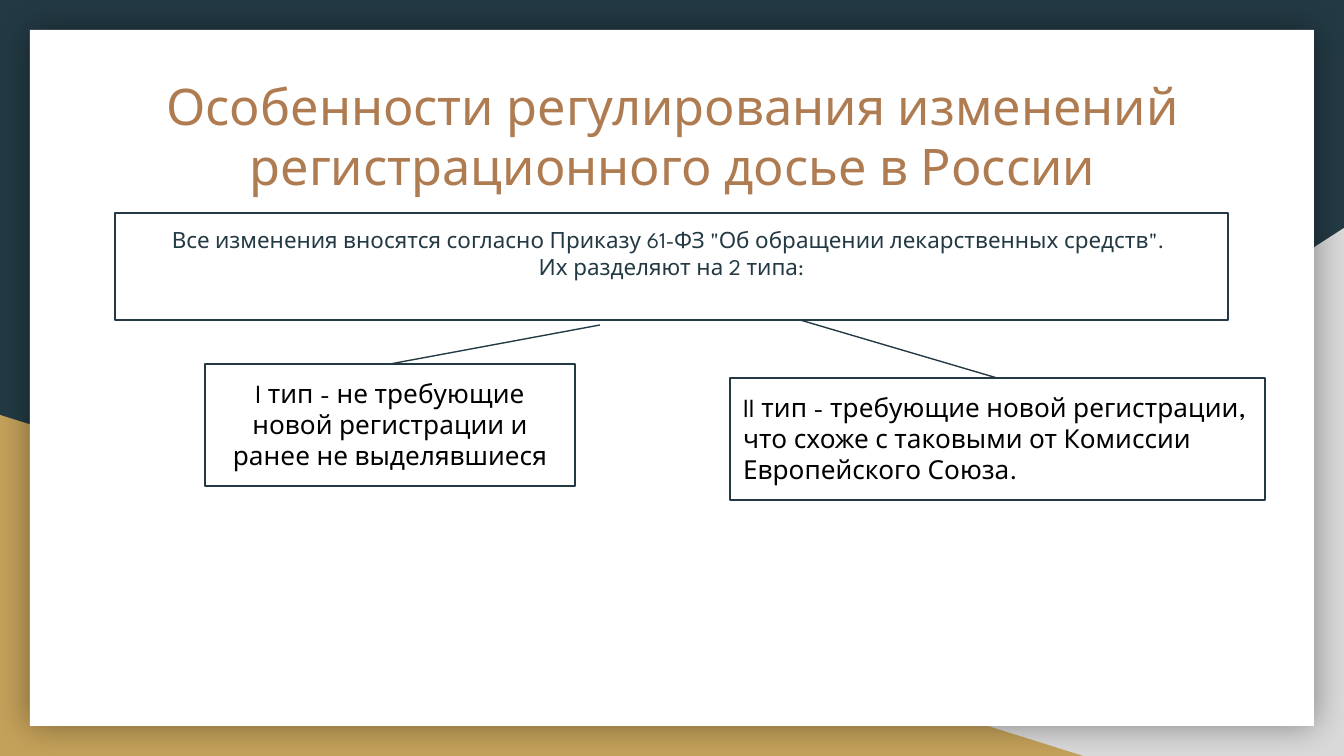
from dataclasses import dataclass

from lxml import etree
from pptx import Presentation
from pptx import util as u
from pptx.dml.color import RGBColor
from pptx.enum import shapes, text
from pptx.oxml.ns import qn

PX = 914400 / 134.4
WIDTH, HEIGHT = 1344, 756


@dataclass(frozen=True)
class Theme:
    font: str = "League Spartan"
    dark: str = "233A44"
    grey: str = "D9D9D9"
    gold: str = "C4A15A"
    paper: str = "FFFFFF"
    heading: str = "AF7B51"
    ink: str = "000000"
    title_size: float = 27
    lead_size: float = 12
    type_size: float = 14
    outline: float = 0.75
    inset: int = 13


def emu(*lengths):
    return [u.Emu(round(length * PX)) for length in lengths]


def rgb(value):
    return RGBColor.from_string(value)


class SlideBuilder:
    def __init__(self, slide, theme):
        self.slide = slide
        self.theme = theme

    def background(self, color):
        fill = self.slide.background.fill
        fill.solid()
        fill.fore_color.rgb = rgb(color)

    def shape(self, kind, box, fill=None, line=None):
        shape = self.slide.shapes.add_shape(kind, *emu(*box))
        shape.shadow.inherit = False
        if fill:
            shape.fill.solid()
            shape.fill.fore_color.rgb = rgb(fill)
        else:
            shape.fill.background()
        if line:
            self.stroke(shape.line, line)
        else:
            shape.line.fill.background()
        return shape

    def triangle(self, box, fill, flip=False):
        corner = self.shape(shapes.MSO_SHAPE.RIGHT_TRIANGLE, box, fill)
        if flip:
            corner._element.spPr.xfrm.set("flipH", "1")

    def card(self, box, fill):
        """A filled sheet with a soft, even shadow."""
        sheet = self.shape(shapes.MSO_SHAPE.RECTANGLE, box, fill)
        effects = sheet._element.spPr.find(qn("a:effectLst"))
        shadow = etree.SubElement(effects, qn("a:outerShdw"),
                                  blurRad=str(u.Pt(18)), dist="0", dir="0",
                                  algn="ctr", rotWithShape="0")
        color = etree.SubElement(shadow, qn("a:srgbClr"), val="000000")
        etree.SubElement(color, qn("a:alpha"), val="40000")

    def title(self, words, box):
        heading = self.slide.shapes.title
        heading.left, heading.top, heading.width, heading.height = emu(*box)
        self.set_text(heading.text_frame, words, self.theme.title_size,
                      self.theme.heading)

    def text_box(self, words, box, size, color,
                 align=text.PP_ALIGN.CENTER, after=0):
        frame = self.shape(shapes.MSO_SHAPE.RECTANGLE, box,
                           line=self.theme.dark).text_frame
        self.set_text(frame, words, size, color, align, after)

    def set_text(self, frame, words, size, color,
                 align=text.PP_ALIGN.CENTER, after=0):
        frame.text = words
        frame.word_wrap = True
        frame.auto_size = text.MSO_AUTO_SIZE.NONE
        frame.vertical_anchor = text.MSO_ANCHOR.TOP
        inset, = emu(self.theme.inset)
        frame.margin_left = frame.margin_right = inset
        frame.margin_top = frame.margin_bottom = inset
        for paragraph in frame.paragraphs:
            paragraph.alignment = align
            paragraph.space_before = u.Pt(0)
            paragraph.space_after = u.Pt(after)
            paragraph.font.name = self.theme.font
            paragraph.font.size = u.Pt(size)
            paragraph.font.color.rgb = rgb(color)

    def branch(self, start, end):
        link = self.slide.shapes.add_connector(
            shapes.MSO_CONNECTOR.STRAIGHT, *emu(*start, *end))
        self.stroke(link.line, self.theme.dark)
        etree.SubElement(link._element.spPr, qn("a:effectLst"))

    def stroke(self, line, color):
        line.color.rgb = rgb(color)
        line.width = u.Pt(self.theme.outline)


def main():
    deck = Presentation()
    deck.slide_width, deck.slide_height = emu(WIDTH, HEIGHT)
    theme = Theme()
    page = SlideBuilder(deck.slides.add_slide(deck.slide_layouts[5]), theme)

    # Backdrop: coloured corners behind a white sheet
    page.background(theme.dark)
    page.triangle((527, 228, 817, 528), theme.grey, flip=True)
    page.triangle((0, 415, 1083, 341), theme.gold)
    page.card((30, 30, 1284, 696), theme.paper)

    # Title, brought in front of the backdrop
    page.title("Особенности регулирования изменений регистрационного "
               "досье в России", (121, 62, 1103, 140))
    page.slide.shapes._spTree.append(page.slide.shapes.title._element)

    # Lead statement
    page.text_box('Все изменения вносятся согласно Приказу 61-ФЗ "Об обращении '
                  'лекарственных средств". \vИх разделяют на 2 типа:',
                  (115, 213, 1113, 107), theme.lead_size, theme.dark, after=12)

    # The two types of change
    page.text_box("I тип - не требующие новой регистрации и ранее не "
                  "выделявшиеся", (205, 364, 370, 122),
                  theme.type_size, theme.ink)
    page.text_box("II тип - требующие новой регистрации, что схоже с таковыми "
                  "от Комиссии Европейского Союза.", (730, 378, 535, 122),
                  theme.type_size, theme.ink, text.PP_ALIGN.LEFT)

    # Branches from each type to the lead statement
    page.branch((390, 364), (600, 325))
    page.branch((997, 378), (800, 320))

    deck.save("out.pptx")


if __name__ == "__main__":
    main()
